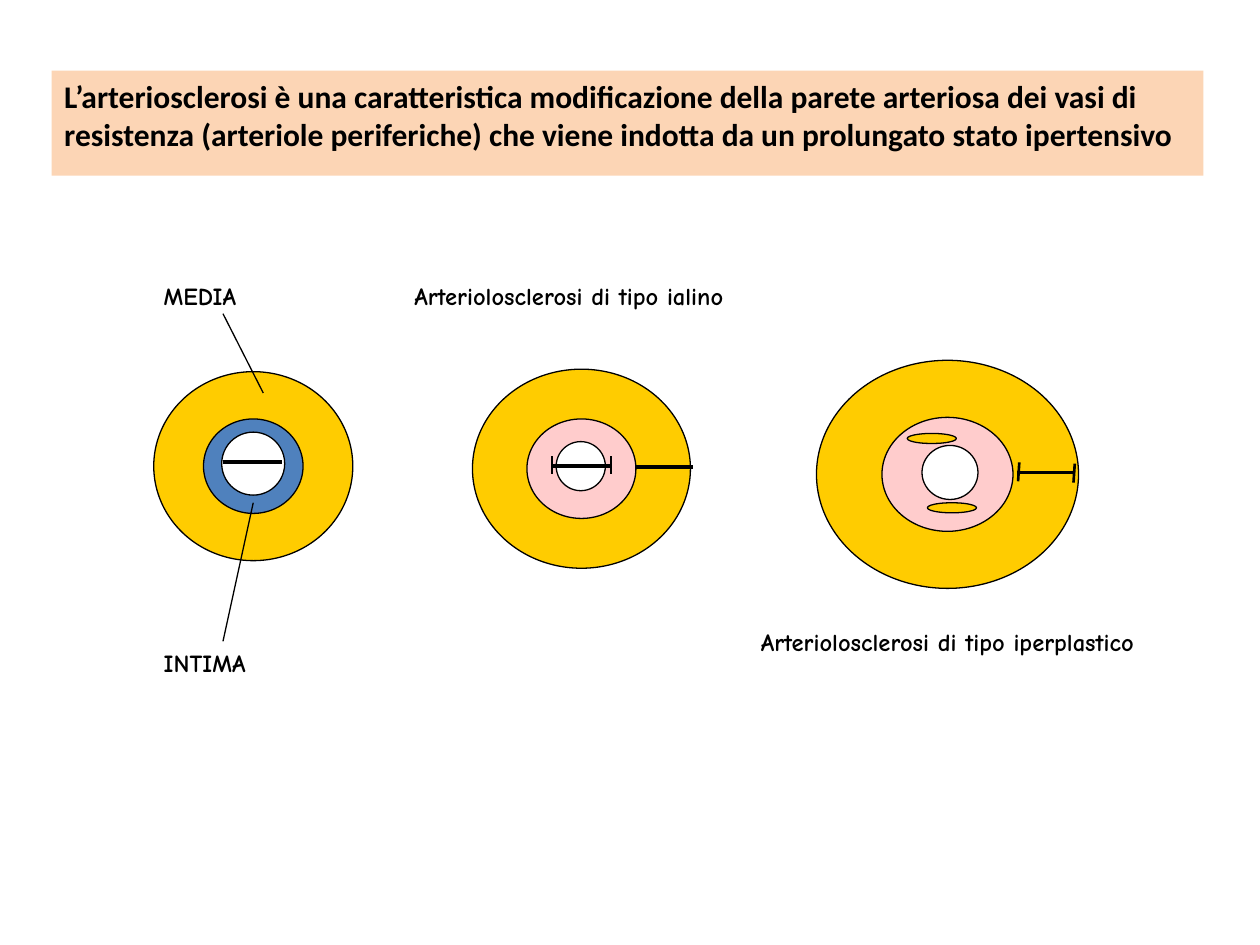
from lxml import etree
from pptx import Presentation
from pptx.dml.color import RGBColor
from pptx.enum.shapes import MSO_CONNECTOR, MSO_SHAPE
from pptx.enum.text import MSO_ANCHOR, MSO_AUTO_SIZE, PP_ALIGN
from pptx.oxml import parse_xml
from pptx.oxml.ns import nsdecls, qn
from pptx.util import Inches, Pt

ELLIPSE = MSO_SHAPE.OVAL
STRAIGHT = MSO_CONNECTOR.STRAIGHT
FIT_SHAPE = MSO_AUTO_SIZE.SHAPE_TO_FIT_TEXT
TOP = MSO_ANCHOR.TOP
LEFT = PP_ALIGN.LEFT

BLACK = RGBColor(0x00, 0x00, 0x00)
PEACH = RGBColor(0xFC, 0xD5, 0xB5)
MEDIA_YELLOW = RGBColor(0xFF, 0xCC, 0x00)
INTIMA_BLUE = RGBColor(0x4F, 0x81, 0xBD)
HYALINE_PINK = RGBColor(0xFF, 0xCC, 0xCC)

TITLE_LINES = (
    "L’arteriosclerosi è una caratteristica modificazione della parete arteriosa dei vasi di",
    "resistenza (arteriole periferiche) che viene indotta da un prolungato stato ipertensivo",
)
THIN, TICK, THICK = 0.75, 1.5, 2.25
HALF_TURN = 10800000


def write_line(paragraph, text, font_name, size):
    paragraph.alignment = LEFT
    run = paragraph.add_run()
    run.text = text
    run.font.name = font_name
    run.font.size = Pt(size)
    run.font.bold = True
    run.font.color.rgb = BLACK


def fill_title(title):
    title.left, title.top = Inches(0.41), Inches(0.56)
    title.width, title.height = Inches(9.14), Inches(0.71)
    title.fill.solid()
    title.fill.fore_color.rgb = PEACH
    frame = title.text_frame
    frame.word_wrap = False
    frame.auto_size = FIT_SHAPE
    frame.vertical_anchor = TOP
    for index, text in enumerate(TITLE_LINES):
        paragraph = frame.add_paragraph() if index else frame.paragraphs[0]
        write_line(paragraph, text, "Calibri", 18)


def add_label(group, text, left, top, width):
    box = group.shapes.add_textbox(Inches(left), Inches(top), Inches(width), Inches(0.33))
    frame = box.text_frame
    frame.word_wrap = False
    frame.auto_size = FIT_SHAPE
    write_line(frame.paragraphs[0], text, "Comic Neue", 14)


def add_ellipse(group, left, top, width, height, color):
    shape = group.shapes.add_shape(
        ELLIPSE, Inches(left), Inches(top), Inches(width), Inches(height))
    shape.shadow.inherit = False
    shape.fill.solid()
    shape.fill.fore_color.rgb = color
    shape.line.color.rgb = BLACK
    shape.line.width = Pt(THIN)
    return shape


def ellipse_path(width, height, scale, sweep):
    """Closed, centred ellipse outline as two half-turn arcs."""
    radius_x, radius_y = int(width * scale / 2), int(height * scale / 2)
    arc = '<a:arcTo wR="{}" hR="{}" stAng="{}" swAng="{}"/>'
    arcs = "".join(arc.format(radius_x, radius_y, start, sweep) for start in (HALF_TURN, 0))
    start_point = f'<a:pt x="{width // 2 - radius_x}" y="{height // 2}"/>'
    return f"<a:moveTo>{start_point}</a:moveTo>{arcs}<a:close/>"


def add_ring(group, left, top, width, height, color, hole):
    """Ring whose hole keeps the proportions of the outer ellipse."""
    shape = add_ellipse(group, left, top, width, height, color)
    size = (shape.width, shape.height)
    outline = ellipse_path(*size, 1, HALF_TURN) + ellipse_path(*size, hole, -HALF_TURN)
    geometry = parse_xml(
        f'<a:custGeom {nsdecls("a")}><a:avLst/><a:gdLst/><a:ahLst/><a:cxnLst/>'
        '<a:rect l="0" t="0" r="r" b="b"/><a:pathLst>'
        f'<a:path w="{size[0]}" h="{size[1]}">{outline}</a:path></a:pathLst></a:custGeom>')
    properties = shape._element.spPr
    properties.replace(properties.find(qn("a:prstGeom")), geometry)


def add_line(group, start, end, weight):
    connector = group.shapes.add_connector(
        STRAIGHT, *(Inches(value) for value in (*start, *end)))
    connector.line.color.rgb = BLACK
    connector.line.width = Pt(weight)
    etree.SubElement(connector._element.spPr, qn("a:effectLst"))


def add_normal_vessel(slide):
    group = slide.shapes.add_group_shape()
    add_ring(group, 1.51, 3.18, 1, 1, INTIMA_BLUE, 0.5)
    add_ring(group, 1.22, 2.95, 1.58, 1.5, MEDIA_YELLOW, 0.5)
    add_label(group, "MEDIA", 1.2, 2.18, 0.88)
    add_line(group, (1.77, 2.49), (2.09, 3.12), THIN)
    add_label(group, "INTIMA", 1.2, 5.09, 1.02)
    add_line(group, (1.77, 5.09), (2.01, 3.99), THIN)
    add_line(group, (1.77, 3.67), (2.24, 3.67), THICK)


def add_hyaline_vessel(slide):
    group = slide.shapes.add_group_shape()
    add_ring(group, 4.11, 3.2, 1, 1, HYALINE_PINK, 0.39)
    add_ring(group, 3.75, 2.93, 1.73, 1.58, MEDIA_YELLOW, 0.5)
    add_label(group, "Arteriolosclerosi di tipo ialino", 3.19, 2.18, 3)
    add_line(group, (4.38, 3.7), (4.85, 3.7), THICK)
    add_line(group, (5.04, 3.71), (5.5, 3.71), THICK)
    for x in (4.38, 4.85):
        add_line(group, (x, 3.62), (x, 3.76), TICK)


def add_hyperplastic_vessel(slide):
    group = slide.shapes.add_group_shape()
    add_ring(group, 6.97, 3.2, 1.14, 1.1, HYALINE_PINK, 0.39)
    add_ring(group, 6.48, 2.86, 2.08, 1.81, MEDIA_YELLOW, 0.5)
    add_line(group, (8.07, 3.75), (8.53, 3.75), THICK)
    for left, top in ((7.2, 3.44), (7.36, 3.99)):
        add_ellipse(group, left, top, 0.39, 0.08, MEDIA_YELLOW)
    add_label(group, "Arteriolosclerosi di tipo iperplastico", 5.94, 4.93, 3.6)
    for x, top in ((8.09, 3.67), (8.53, 3.68)):
        add_line(group, (x, top), (x - 0.01, top + 0.15), TICK)


def main():
    presentation = Presentation()
    presentation.slide_width, presentation.slide_height = Inches(10), Inches(7.5)
    slide = presentation.slides.add_slide(presentation.slide_layouts[5])
    fill_title(slide.shapes.title)
    add_normal_vessel(slide)
    add_hyaline_vessel(slide)
    add_hyperplastic_vessel(slide)
    presentation.save("out.pptx")


if __name__ == "__main__":
    main()
